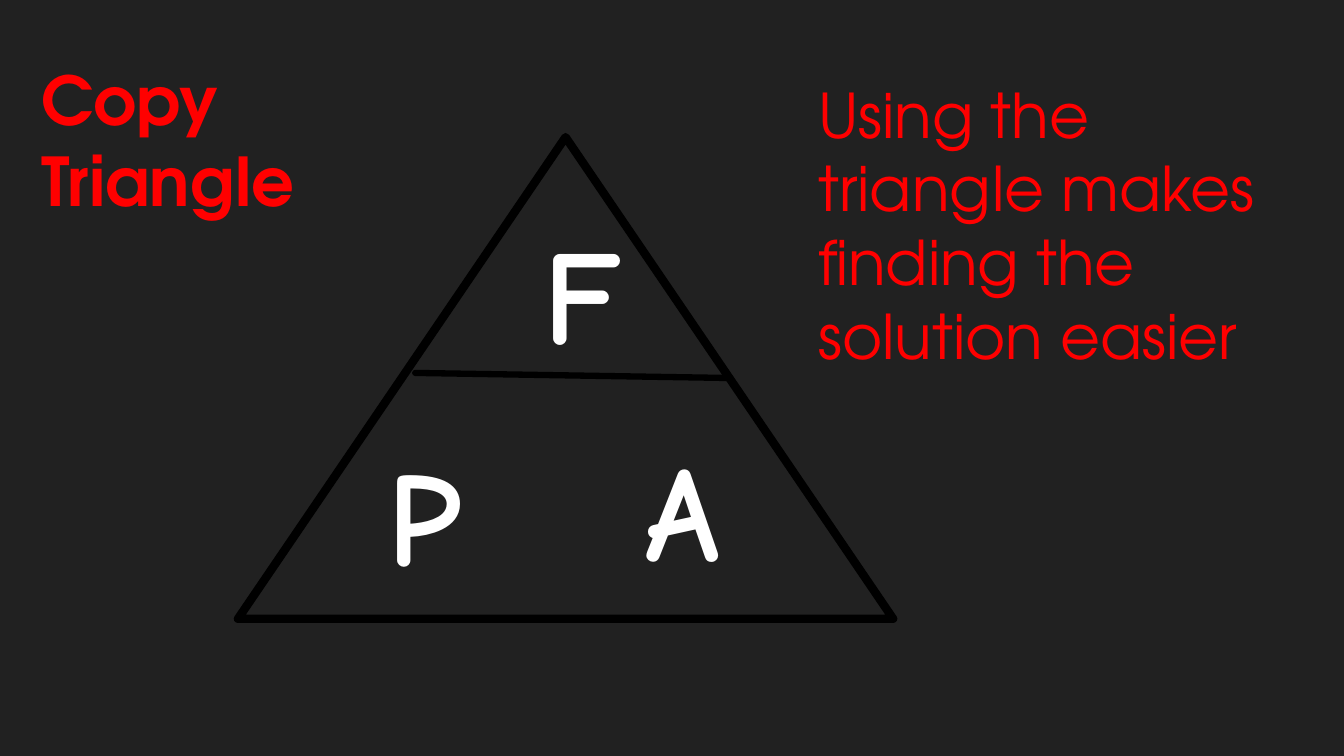
import dataclasses

import pptx
import pptx.dml.color
import pptx.enum.shapes
import pptx.enum.text
import pptx.oxml.ns
import pptx.oxml.xmlchemy
import pptx.util
from lxml import etree

Pt = pptx.util.Pt
RGB = pptx.dml.color.RGBColor.from_string


@dataclasses.dataclass(frozen=True)
class Theme:
    background: str = "212121"
    outline: str = "000000"
    letter: str = "FFFFFF"
    accent: str = "FF0000"
    letter_font: str = "Comic Neue"
    text_font: str = "TeX Gyre Adventor"
    letter_size: int = 96
    title_size: int = 48
    advice_size: int = 44


theme = Theme()
deck = pptx.Presentation()
deck.slide_width, deck.slide_height = Pt(960), Pt(540)
page = deck.slides.add_slide(deck.slide_layouts[6])
page.background.fill.solid()
page.background.fill.fore_color.rgb = RGB(theme.background)


def add_text(text, *, left, top, width, height, size, font, color, bold=False):
    box = page.shapes.add_textbox(Pt(left), Pt(top), Pt(width), Pt(height))
    frame = box.text_frame
    frame.word_wrap = True
    frame.auto_size = pptx.enum.text.MSO_AUTO_SIZE.SHAPE_TO_FIT_TEXT
    span = frame.paragraphs[0].add_run()
    span.text = text
    span.font.name = font
    span.font.size = Pt(size)
    span.font.bold = bold
    span.font.color.rgb = RGB(color)


def draw_round_line(shape, width):
    """Give the shape a line with round caps and joins."""
    shape.line.color.rgb = RGB(theme.outline)
    shape.line.width = Pt(width)
    line = shape.line._get_or_add_ln()
    line.set("cap", "rnd")
    etree.SubElement(line, pptx.oxml.ns.qn("a:round"))


triangle = page.shapes.add_shape(
    pptx.enum.shapes.MSO_SHAPE.ISOSCELES_TRIANGLE, Pt(170), Pt(98), Pt(468), Pt(344)
)
triangle.shadow.inherit = False
triangle.fill.background()
draw_round_line(triangle, 6)

divider = page.shapes.add_connector(
    pptx.enum.shapes.MSO_CONNECTOR.STRAIGHT, Pt(296.6), Pt(266.4), Pt(520.6), Pt(270)
)
draw_round_line(divider, 4.5)
etree.SubElement(divider._element.spPr, pptx.oxml.ns.qn("a:effectLst"))

for letter, left, top, width in (
    ("P", 270, 305.3, 41.8),
    ("A", 454.3, 301.7, 51.8),
    ("F", 380.9, 146.2, 45.4),
):
    add_text(letter, left=left, top=top, width=width, height=123.8, bold=True,
             size=theme.letter_size, font=theme.letter_font, color=theme.letter)

add_text("Using the triangle makes finding the solution easier",
         left=577.4, top=51.1, width=327.6, height=220.3,
         size=theme.advice_size, font=theme.text_font, color=theme.accent)
add_text("Copy Triangle", left=22.3, top=38.2, width=211, height=123.8, bold=True,
         size=theme.title_size, font=theme.text_font, color=theme.accent)

deck.save("out.pptx")
